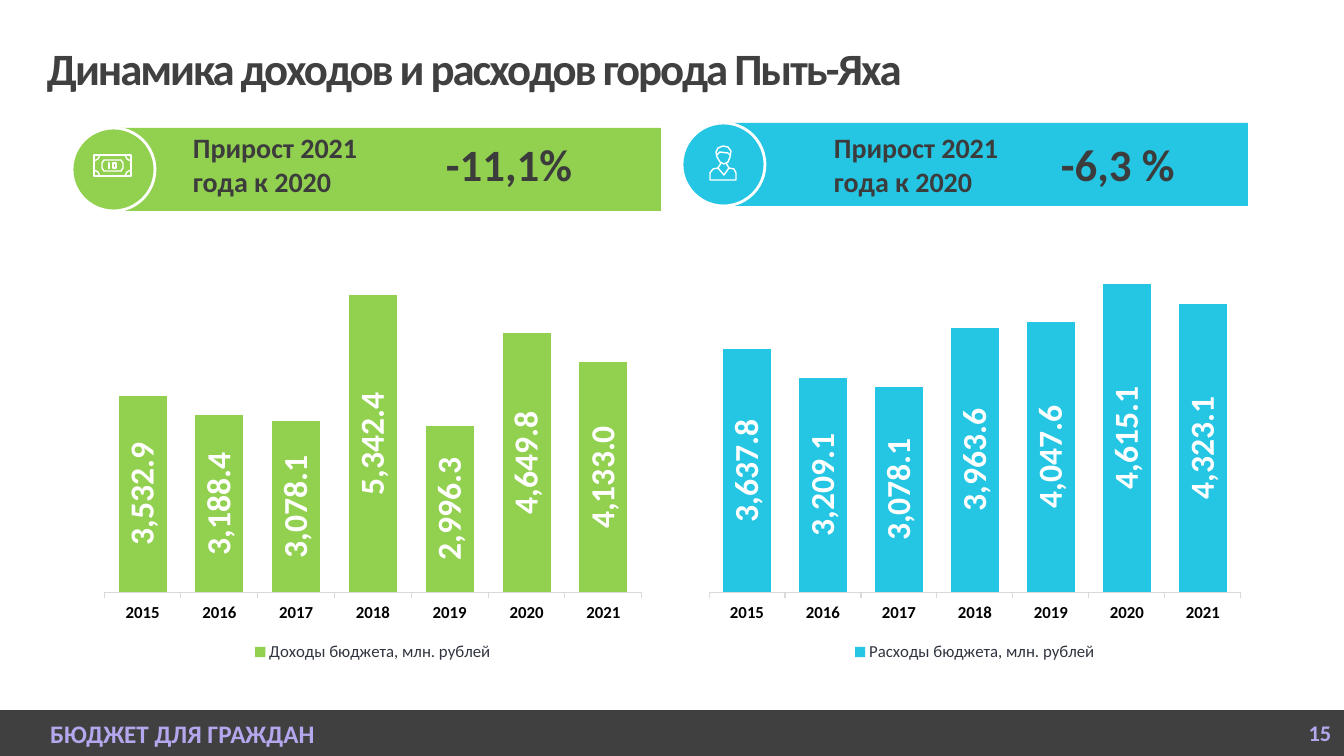
"""Build the slide comparing yearly budget income and spending of a town."""
from pptx import Presentation, util as u
from pptx.chart.data import CategoryChartData
from pptx.dml.color import RGBColor
from pptx.enum import chart as charts, shapes, text
from pptx.oxml.ns import qn

PX = 914400 / 100.8
FONT = "Calibri"
COLORS = {
    "white": "FFFFFF", "bar": "404040", "lilac": "B5A7ED", "ink": "3C3C3C",
    "green": "92D050", "blue": "25C6E3", "axis": "D9D9D9", "legend": "30353F", "black": "000000",
}
YEARS = [str(year) for year in range(2015, 2022)]
BILL_ICON = [
    [
        ([(94, 155), (131, 155), (131, 176), (94, 176)], True),
        ([(100, 155), (98, 159), (94, 161)], False),
        ([(125, 155), (127, 159), (131, 161)], False),
        ([(94, 170), (98, 172), (100, 176)], False),
        ([(131, 170), (127, 172), (125, 176)], False),
    ],
    [([(104, 160), (121, 160), (123, 163), (123, 168),
       (121, 171), (104, 171), (102, 168), (102, 163)], True)],
    [([(108, 163), (109, 163), (109, 169)], False)],
    [([(113, 163), (116, 163), (116, 168), (113, 168)], True)],
]
PERSON_ICON = [[
    ([(717, 157), (716, 152), (718, 148), (723, 146), (728, 147), (731, 151),
      (730, 157), (728, 162), (724, 164), (720, 162)], True),
    ([(717, 155), (720, 152), (728, 153), (730, 155)], False),
    ([(721, 163), (718, 168), (724, 175), (729, 168), (726, 163)], False),
    ([(718, 168), (713, 169), (710, 173), (710, 180),
      (736, 180), (736, 173), (734, 169), (729, 168)], False),
]]
PANELS = [
    dict(color="green", band=(108, 128, 553, 83), circle=(72, 128, 83, 83), icon=BILL_ICON,
         growth="-11,1%", growth_box=(446, 137, 127, 54), label_box=(193, 131, 190, 67),
         chart_box=(93, 250, 560, 416), series="Доходы бюджета, млн. рублей", maximum=6000,
         values=[3532.9, 3188.4, 3078.1, 5342.4, 2996.3, 4649.8, 4133.0]),
    dict(color="blue", band=(725, 123, 523, 83), circle=(682, 123, 83, 83), icon=PERSON_ICON,
         growth="-6,3 %", growth_box=(1061, 137, 115, 54), label_box=(834, 131, 190, 67),
         chart_box=(698, 250, 554, 416), series="Расходы бюджета, млн. рублей", maximum=5000,
         values=[3637.8, 3209.1, 3078.1, 3963.6, 4047.6, 4615.1, 4323.1]),
]


def style_font(font, size, color, bold=False):
    font.name, font.size, font.bold = FONT, u.Pt(size), bold
    font.color.rgb = RGBColor.from_string(COLORS[color])


def write(shape, words, size, color, anchor=text.MSO_ANCHOR.TOP, align=text.PP_ALIGN.LEFT):
    frame = shape.text_frame
    frame.margin_left = frame.margin_top = frame.margin_right = frame.margin_bottom = 0
    frame.word_wrap, frame.vertical_anchor = True, anchor
    paragraph = frame.paragraphs[0]
    paragraph.alignment = align
    run = paragraph.add_run()
    run.text = words
    style_font(run.font, size, color, True)
    return paragraph


presentation = Presentation()
presentation.slide_width, presentation.slide_height = u.Emu(round(1344 * PX)), u.Emu(round(756 * PX))
slide = presentation.slides.add_slide(presentation.slide_layouts[5])

title = slide.shapes.title
title.left, title.top, title.width, title.height = [round(n * PX) for n in (47, 47, 1249, 47)]
heading = write(title, "Динамика доходов и расходов города Пыть-Яха", 32, "bar", text.MSO_ANCHOR.MIDDLE)
heading.line_spacing = 0.9
heading.runs[0]._r.get_or_add_rPr().set("spc", "-150")

for box, words, size, align, inset in [
    ((0, 710, 1296, 46), "БЮДЖЕТ ДЛЯ ГРАЖДАН", 18, text.PP_ALIGN.LEFT, 50),
    ((1296, 710, 48, 46), "15", 16, text.PP_ALIGN.CENTER, 0),
]:
    footer = slide.shapes.add_shape(shapes.MSO_SHAPE.RECTANGLE, *[round(n * PX) for n in box])
    footer.shadow.inherit = False
    footer.fill.solid()
    footer.fill.fore_color.rgb = RGBColor.from_string(COLORS["bar"])
    footer.line.fill.background()
    write(footer, words, size, "lilac", text.MSO_ANCHOR.MIDDLE, align)
    footer.text_frame.margin_left = round(inset * PX)

for panel in PANELS:
    accent = RGBColor.from_string(COLORS[panel["color"]])
    white = RGBColor.from_string(COLORS["white"])

    data = CategoryChartData(number_format="#,##0.0")
    data.categories = YEARS
    data.add_series(panel["series"], panel["values"])
    chart = slide.shapes.add_chart(charts.XL_CHART_TYPE.COLUMN_STACKED,
                                   *[round(n * PX) for n in panel["chart_box"]], data).chart
    chart.has_title = False
    style_font(chart.font, 10, "black")
    chart.has_legend = True
    chart.legend.position = charts.XL_LEGEND_POSITION.BOTTOM
    chart.legend.include_in_layout = False
    style_font(chart.legend.font, 12, "legend")
    chart.value_axis.visible = False
    chart.value_axis.has_major_gridlines = False
    chart.value_axis.minimum_scale, chart.value_axis.maximum_scale = 0, panel["maximum"]
    year_axis = chart.category_axis
    year_axis.major_tick_mark = charts.XL_TICK_MARK.OUTSIDE
    year_axis.format.line.color.rgb = RGBColor.from_string(COLORS["axis"])
    year_axis.format.line.width = u.Pt(0.75)
    style_font(year_axis.tick_labels.font, 12, "black", True)

    plot = chart.plots[0]
    plot.gap_width, plot.overlap, plot.vary_by_categories = 60, 100, False
    series = plot.series[0]
    series.format.fill.solid()
    series.format.fill.fore_color.rgb = accent
    labels = series.data_labels
    labels.show_value = True
    labels.number_format, labels.number_format_is_linked = "#,##0.0", False
    labels.position = charts.XL_LABEL_POSITION.CENTER
    style_font(labels.font, 24, "white", True)
    label_body = next(labels._element.iter(qn("a:bodyPr")))
    label_body.set("rot", "-5400000")
    label_body.set("vert", "horz")

    for preset, key in [(shapes.MSO_SHAPE.RECTANGLE, "band"), (shapes.MSO_SHAPE.OVAL, "circle")]:
        shape = slide.shapes.add_shape(preset, *[round(n * PX) for n in panel[key]])
        shape.shadow.inherit = False
        shape.fill.solid()
        shape.fill.fore_color.rgb = accent
        shape.line.fill.background()
    shape.line.color.rgb = white
    shape.line.width = u.Pt(2)

    for contours in panel["icon"]:
        builder = slide.shapes.build_freeform(*contours[0][0][0], scale=PX)
        for points, closed in contours:
            builder.move_to(*points[0])
            builder.add_line_segments(points[1:], close=closed)
        icon = builder.convert_to_shape()
        icon.shadow.inherit = False
        icon.fill.background()
        icon.line.color.rgb = white
        icon.line.width = u.Pt(1)

    growth = slide.shapes.add_textbox(*[round(n * PX) for n in panel["growth_box"]])
    write(growth, panel["growth"], 32, "ink")
    growth.text_frame.word_wrap = False
    label = slide.shapes.add_textbox(*[round(n * PX) for n in panel["label_box"]])
    write(label, "Прирост 2021 года к 2020", 20, "ink")

presentation.save("out.pptx")
